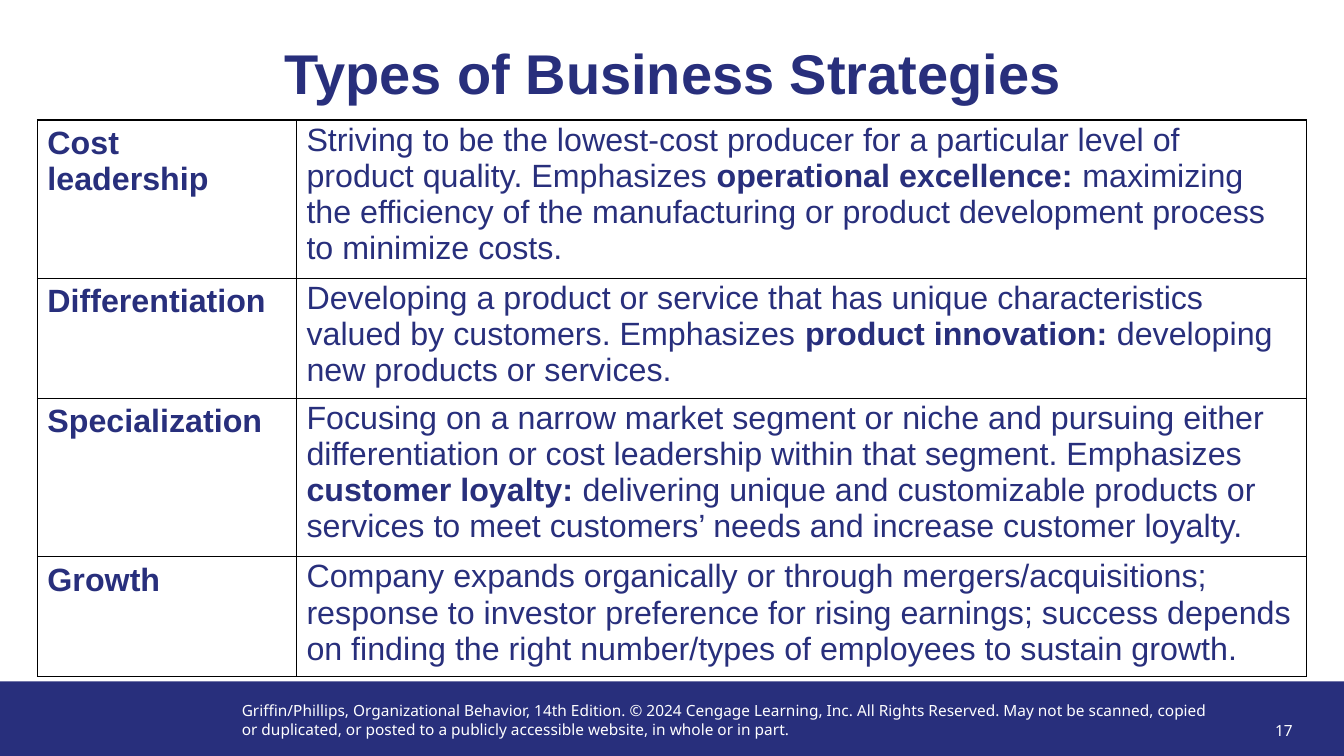
from lxml import etree
from pptx import Presentation, util as u
from pptx.dml.color import RGBColor
from pptx.enum import shapes, text
from pptx.oxml import ns

COLORS = {"navy": "282F7C", "white": "FFFFFF", "black": "000000"}
TITLE = "Types of Business Strategies"
NOTICE = (
    "Griffin/Phillips, Organizational Behavior, 14th Edition. © 2024 Cengage Learning, Inc. "
    "All Rights Reserved. May not be scanned, copied or duplicated, or posted to a publicly "
    "accessible website, in whole or in part."
)
ROWS = [
    ("Cost leadership", [
        "Striving to be the lowest-cost producer for a particular level of product quality. Emphasizes ",
        "operational excellence:",
        " maximizing the efficiency of the manufacturing or product development process to minimize costs.",
    ]),
    ("Differentiation", [
        "Developing a product or service that has unique characteristics valued by customers. Emphasizes ",
        "product innovation: ",
        "developing new products or services.",
    ]),
    ("Specialization", [
        "Focusing on a narrow market segment or niche and pursuing either differentiation or cost "
        "leadership within that segment. Emphasizes ",
        "customer loyalty: ",
        "delivering unique and customizable products or services to meet customers’ needs and "
        "increase customer loyalty.",
    ]),
    ("Growth", [
        "Company expands organically or through mergers/acquisitions; response to investor preference "
        "for rising earnings; success depends on finding the right number/types of employees to "
        "sustain growth.",
    ]),
]


class Deck:
    """Hold the style and current slide; lengths are percent of the slide's size."""

    def __init__(self):
        self.prs = Presentation()
        self.prs.slide_width, self.prs.slide_height = u.Inches(13.33), u.Inches(7.5)
        self.slide = self.prs.slides.add_slide(self.prs.slide_layouts[6])

    def wide(self, share):
        return round(self.prs.slide_width * share / 100)

    def high(self, share):
        return round(self.prs.slide_height * share / 100)

    def area(self, left, top, width, height):
        return self.wide(left), self.high(top), self.wide(width), self.high(height)

    def style(self, font, size, color, face="Arial", bold=None):
        font.name, font.size, font.bold = face, u.Pt(size), bold
        font.color.rgb = RGBColor.from_string(COLORS[color])

    def band(self, area, color):
        bar = self.slide.shapes.add_shape(shapes.MSO_SHAPE.RECTANGLE, *self.area(*area))
        bar.shadow.inherit = False
        bar.fill.solid()
        bar.fill.fore_color.rgb = RGBColor.from_string(COLORS[color])
        bar.line.fill.background()

    def label(self, area, words, size, color, face="Arial", bold=None,
              align=text.PP_ALIGN.LEFT, anchor=text.MSO_ANCHOR.MIDDLE):
        frame = self.slide.shapes.add_textbox(*self.area(*area)).text_frame
        frame.word_wrap, frame.vertical_anchor = True, anchor
        para = frame.paragraphs[0]
        para.text, para.alignment = words, align
        self.style(para.font, size, color, face, bold)

    def edge(self, cell):
        props = cell._tc.get_or_add_tcPr()
        for spot, side in enumerate(("lnL", "lnR", "lnT", "lnB")):
            line = etree.Element(ns.qn(f"a:{side}"), w=str(u.Pt(1)))
            fill = etree.SubElement(line, ns.qn("a:solidFill"))
            etree.SubElement(fill, ns.qn("a:srgbClr"), val=COLORS["black"])
            props.insert(spot, line)

    def cell(self, cell, parts, size, bold=None):
        cell.fill.background()
        self.edge(cell)
        para = cell.text_frame.paragraphs[0]
        for spot, part in enumerate(parts):
            run = para.add_run()
            run.text = part
            if spot % 2:
                run.font.bold = True
        self.style(para.font, size, "navy", bold=bold)

    def table(self, left, top, cols, highs, rows, size):
        area = self.area(left, top, sum(cols), sum(highs))
        grid = self.slide.shapes.add_table(len(rows), len(cols), *area).table
        grid.first_row = grid.horz_banding = False
        for col, width in zip(grid.columns, cols):
            col.width = self.wide(width)
        for row, height, (name, parts) in zip(grid.rows, highs, rows):
            row.height = self.high(height)
            head, body = row.cells
            self.cell(head, [name], size, bold=True)
            body.margin_top = body.margin_bottom = u.Inches(0.02)
            self.cell(body, parts, size)


def main():
    deck = Deck()
    deck.band((0, 90.13, 100, 9.87), "navy")
    deck.label((17.25, 92.13, 73.52, 6.27), NOTICE, 11, "white", "Noto Sans",
               anchor=text.MSO_ANCHOR.TOP)
    deck.label((90.92, 94, 6, 5.33), "17", 11, "white", "Noto Sans",
               align=text.PP_ALIGN.RIGHT)
    deck.label((6.9, 3.6, 86.27, 11.87), TITLE, 40, "navy", bold=True,
               align=text.PP_ALIGN.CENTER)
    deck.table(2.78, 15.87, (19.28, 75.17), (16.13, 12.4) * 2, ROWS, 23)
    deck.prs.save("out.pptx")


if __name__ == "__main__":
    main()
